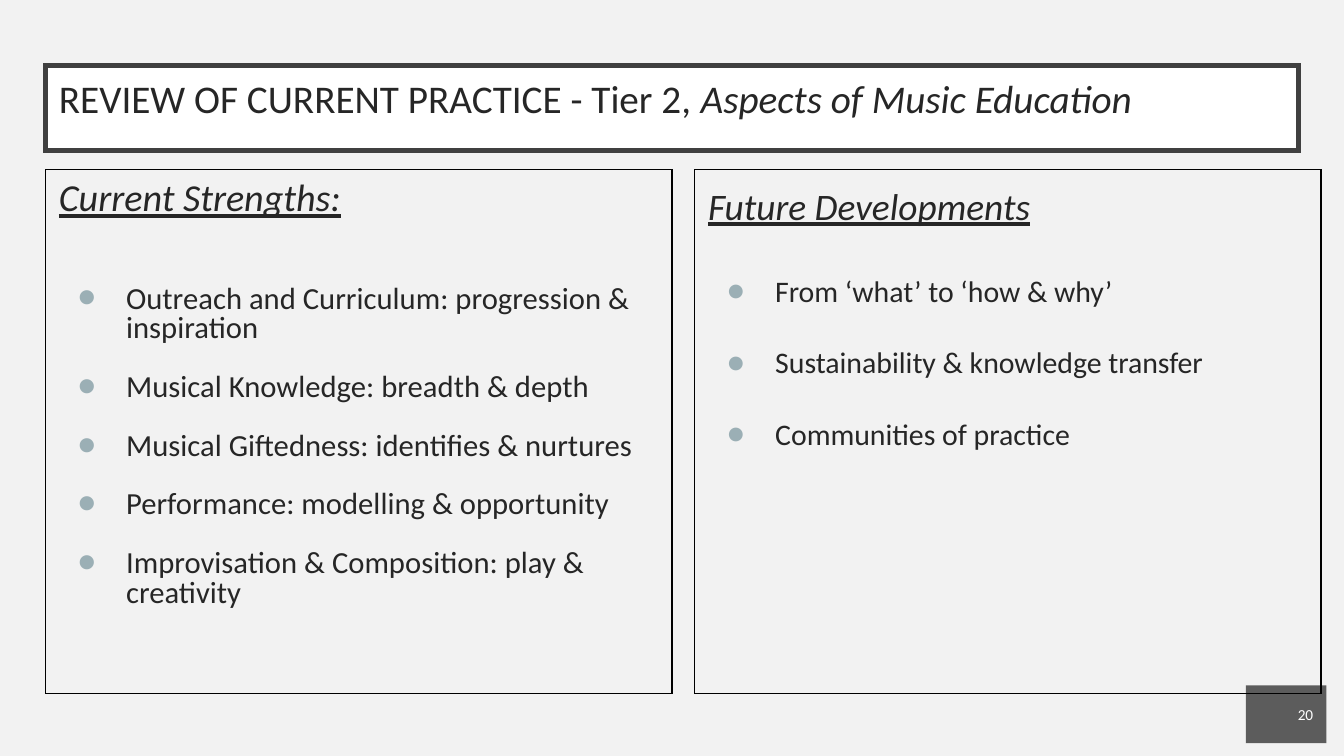
from lxml import etree
from pptx import Presentation
from pptx.dml.color import RGBColor
from pptx.enum import shapes, text
from pptx.oxml import ns
from pptx.util import Inches, Pt

INK = "262626"
FONT = "Calibri"
STRENGTHS = [
    "Outreach and Curriculum: progression & inspiration",
    "Musical Knowledge: breadth & depth",
    "Musical Giftedness: identifies & nurtures",
    "Performance: modelling & opportunity",
    "Improvisation & Composition: play & creativity",
]
PLANS = [
    "From ‘what’ to ‘how & why’",
    "Sustainability & knowledge transfer",
    "Communities of practice",
]


def paint(fill, color):
    fill.solid()
    fill.fore_color.rgb = RGBColor.from_string(color)


def add_box(slide, at, fill=None, line=None, width=0.75, anchor="TOP"):
    box = slide.shapes.add_shape(
        shapes.MSO_SHAPE.RECTANGLE, *[Inches(n) for n in at])
    box.shadow.inherit = False
    if fill:
        paint(box.fill, fill)
    else:
        box.fill.background()
    if line:
        paint(box.line.fill, line)
        box.line.width = Pt(width)
        # Square corners
        edge = box.line._get_or_add_ln()
        etree.SubElement(edge, ns.qn("a:miter"), lim="800000")
    else:
        box.line.fill.background()
    frame = box.text_frame
    inset = Inches(0.1)
    form = dict(word_wrap=True, margin_left=inset, margin_right=inset,
                margin_top=inset, margin_bottom=inset,
                vertical_anchor=text.MSO_ANCHOR[anchor])
    for name, value in form.items():
        setattr(frame, name, value)
    return box


def add_para(frame, align="LEFT", **form):
    """Use the empty first paragraph, or add one."""
    first = frame.paragraphs[0]
    para = frame.add_paragraph() if first.runs else first
    para.alignment = text.PP_ALIGN[align]
    for name, value in form.items():
        setattr(para, name, value)
    return para


def add_run(para, words, size, color=INK, **form):
    run = para.add_run()
    run.text = words
    paint(run.font.fill, color)
    form.update(name=FONT, size=Pt(size))
    for name, value in form.items():
        setattr(run.font, name, value)


def add_bullet(para, color):
    props = para._p.get_or_add_pPr()
    props.set("marL", str(Inches(0.5)))
    props.set("indent", str(Inches(-0.36)))
    tint = etree.SubElement(props, ns.qn("a:buClr"))
    etree.SubElement(tint, ns.qn("a:srgbClr"), val=color)
    etree.SubElement(props, ns.qn("a:buFont"), typeface=FONT)
    etree.SubElement(props, ns.qn("a:buChar"), char="●")


def add_panel(slide, left, head, items, sizes, gaps, pitch):
    """Framed column: underlined heading, then spaced bullets."""
    frame = add_box(slide, (left, 1.26, 4.66, 3.9), line="000000").text_frame
    para = add_para(frame, line_spacing=pitch)
    add_run(para, head, sizes[0], italic=True, underline=True)
    for i, item in enumerate(items):
        gap = gaps[min(i, 1)]
        para = add_para(frame, line_spacing=pitch, space_before=Pt(gap))
        add_bullet(para, "9BAFB5")
        add_run(para, item, sizes[1])


def add_number(slide, words):
    box = add_box(slide, (9.27, 5.1, 0.6, 0.43), "1D1D1D", anchor="MIDDLE")
    tint = box.fill._xPr.find(".//" + ns.qn("a:srgbClr"))
    etree.SubElement(tint, ns.qn("a:alpha"), val="70000")
    add_run(add_para(box.text_frame, "RIGHT"), words, 8.2, "FFFFFF")


def main():
    # Widescreen page, 16 to 9
    deck = Presentation()
    deck.slide_width = Inches(10)
    deck.slide_height = Inches(10) * 9 // 16
    slide = deck.slides.add_slide(deck.slide_layouts[6])
    paint(slide.background.fill, "F2F2F2")

    # Title bar
    bar = add_box(slide, (0.34, 0.49, 9.32, 0.63), "FFFFFF", "404040", 2.5)
    para = add_para(bar.text_frame, line_spacing=0.9)
    add_run(para, "REVIEW OF CURRENT PRACTICE - Tier 2, ", 21)
    add_run(para, "Aspects of Music Education", 21, italic=True)

    # Two columns, with the page number behind the right one
    add_panel(slide, 0.34, "Current Strengths:", STRENGTHS,
              (20.4, 16.4), (35.5, 15.75), 0.8)
    add_number(slide, "20")
    add_panel(slide, 5.17, "Future Developments", PLANS,
              (20, 16), (24, 19.2), 1.0)
    deck.save("out.pptx")


if __name__ == "__main__":
    main()
